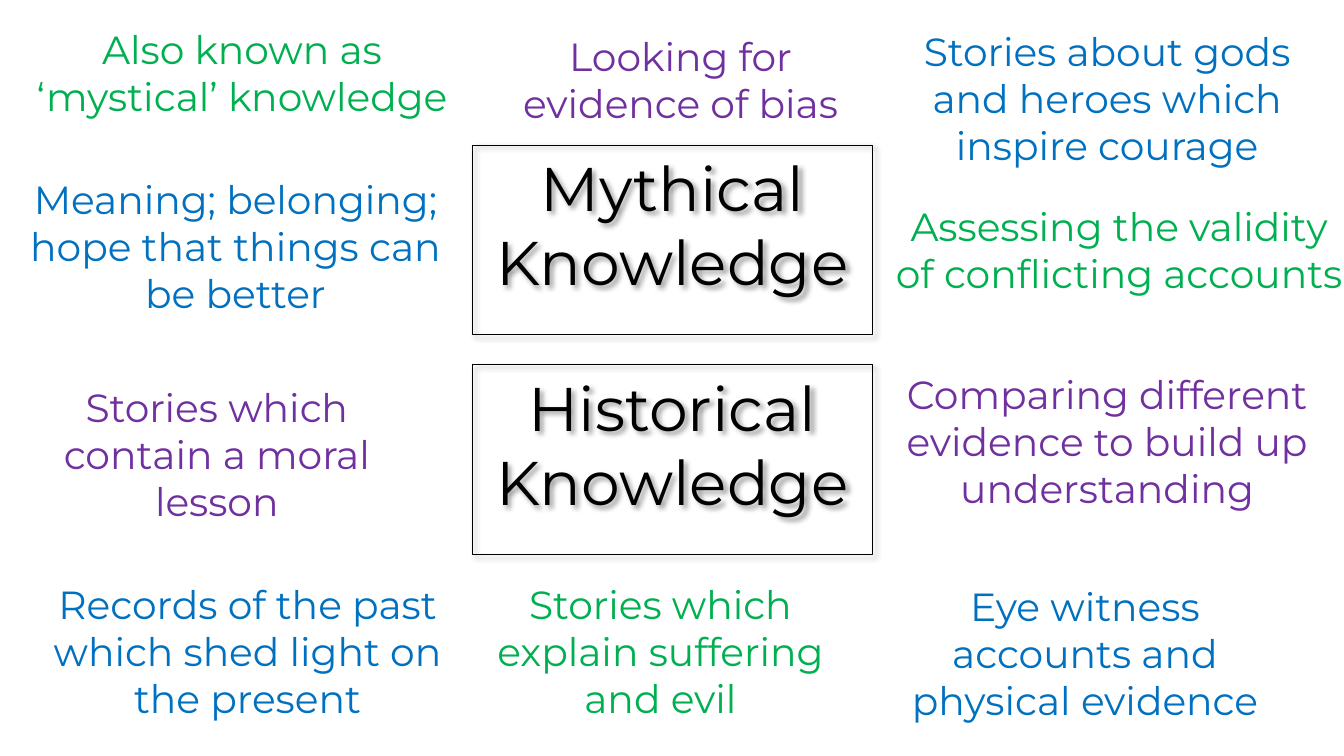
from pptx import Presentation
from pptx.dml.color import RGBColor
from pptx.enum.shapes import MSO_SHAPE as SHAPE
from pptx.enum.text import MSO_ANCHOR as ANCHOR, MSO_AUTO_SIZE as AUTO, PP_ALIGN as ALIGN
from pptx.oxml import parse_xml
from pptx.oxml.ns import nsdecls
from pptx.util import Inches, Pt

BLACK, GREEN, BLUE, PURPLE = "000000", "00B050", "0070C0", "7030A0"

HEADINGS = [
    (1.44, ["Mythical", "Knowledge"]),
    (3.62, ["Historical Knowledge"]),
]

STATEMENTS = [
    (0.06, 0.2, 4.68, 1.04, GREEN, "Also known as ‘mystical’ knowledge"),
    (4.46, 5.71, 4.18, 1.51, GREEN, "Stories which explain suffering and evil"),
    (0.09, 1.69, 4.49, 1.51, BLUE, "Meaning; belonging; hope that things can be better"),
    (8.64, 0.22, 4.68, 1.51, BLUE, "Stories about gods and heroes which inspire courage"),
    (0.25, 5.71, 4.41, 1.51, BLUE, "Records of the past which shed light on the present"),
    (8.67, 5.73, 4.18, 1.51, BLUE, "Eye witness accounts and physical evidence"),
    (8.76, 1.96, 4.68, 1.51, GREEN, "Assessing the validity of conflicting accounts"),
    (0.06, 3.75, 4.18, 1.51, PURPLE, "Stories which contain a moral lesson"),
    (8.89, 3.62, 4.18, 1.99, PURPLE, "Comparing different evidence to build up understanding"),
    (4.66, 0.27, 4.18, 1.04, PURPLE, "Looking for evidence of bias"),
]


def rgb(color):
    return RGBColor.from_string(color)


class Board:
    font = "Montserrat"
    frame = {"word_wrap": True, "auto_size": AUTO.SHAPE_TO_FIT_TEXT, "vertical_anchor": ANCHOR.TOP}

    def __init__(self, prs):
        self.s = prs.slides.add_slide(prs.slide_layouts[6])

    def add_lines(self, sp, lines, size, color):
        tf = sp.text_frame
        for name, value in self.frame.items():
            setattr(tf, name, value)
        for i, line in enumerate(lines):
            p = tf.add_paragraph() if i else tf.paragraphs[0]
            p.alignment = ALIGN.CENTER
            r = p.add_run()
            r.text = line
            for name, value in {"name": self.font, "size": Pt(size)}.items():
                setattr(r.font, name, value)
            r.font.color.rgb = rgb(color)

    def add_shadow(self, sp):
        sp.shadow.inherit = False
        effects = sp.element.spPr.find("{*}effectLst")
        effects.append(parse_xml(
            f'<a:outerShdw {nsdecls("a")} blurRad="{Pt(4)}" dist="{Pt(3)}" dir="{45 * 60000}" '
            f'algn="tl" rotWithShape="0"><a:srgbClr val="{BLACK}"><a:alpha val="40000"/>'
            '</a:srgbClr></a:outerShdw>'))

    def heading(self, top, lines):
        box = map(Inches, (4.69, top, 3.96, 1.88))
        sp = self.s.shapes.add_shape(SHAPE.RECTANGLE, *box)
        sp.fill.background()
        sp.line.color.rgb = rgb(BLACK)
        sp.line.width = Pt(0.75)
        self.add_shadow(sp)
        self.add_lines(sp, lines, 44, BLACK)

    def statement(self, left, top, width, height, color, text):
        sp = self.s.shapes.add_textbox(*map(Inches, (left, top, width, height)))
        self.add_lines(sp, [text], 28, color)


def main():
    prs = Presentation()
    prs.slide_width, prs.slide_height = Inches(13.33), Inches(7.5)
    board = Board(prs)
    for heading in HEADINGS:
        board.heading(*heading)
    for statement in STATEMENTS:
        board.statement(*statement)
    prs.save("out.pptx")


if __name__ == "__main__":
    main()
